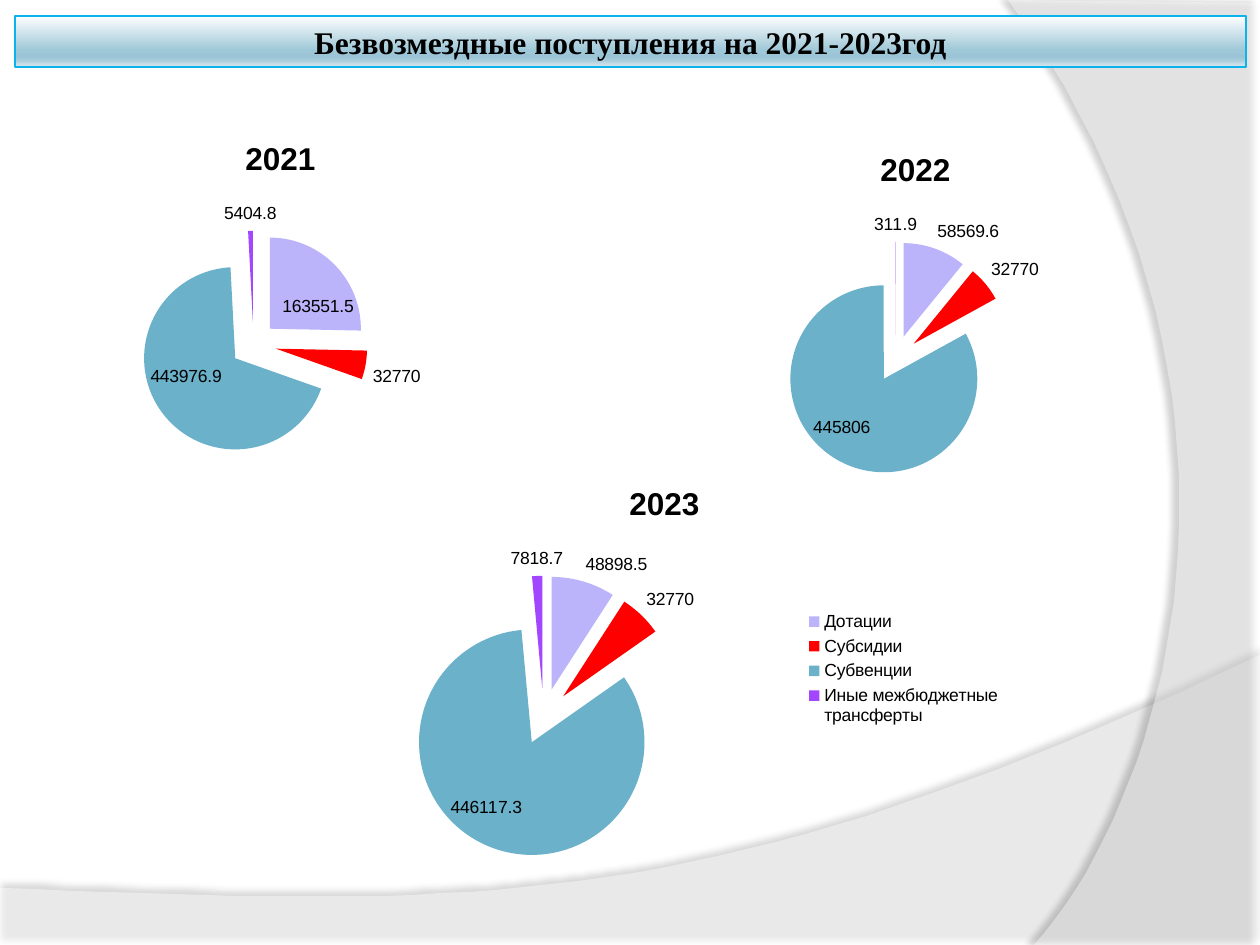
from lxml.etree import SubElement
from pptx import Presentation
from pptx.chart.data import CategoryChartData
from pptx.dml.color import RGBColor
from pptx.enum.chart import XL_CHART_TYPE, XL_LABEL_POSITION, XL_LEGEND_POSITION
from pptx.enum.text import MSO_ANCHOR, PP_ALIGN
from pptx.oxml import parse_xml
from pptx.oxml.ns import nsdecls, qn
from pptx.util import Pt

PX = 914400 / 126
SLICE_COLORS = ["BBB4FB", "FF0000", "6BB1C9", "A246FF"]
NUMBERS = ["1", "2", "3", "4"]
TRANSFERS = ["Дотации", "Субсидии", "Субвенции", "Иные межбюджетные трансферты"]
CHARTS = [
    ("2021", (0, 118, 561, 358), NUMBERS, [163551.5, 32770, 443976.9, 5404.8], False),
    ("2022", (630, 129, 571, 364), NUMBERS, [58569.6, 32770, 445806, 311.9], False),
    ("2023", (315, 462, 699, 413), TRANSFERS, [48898.5, 32770, 446117.3, 7818.7], True),
]
TITLE_STOPS = [(0, "FEFEFF"), (68, "9EC7D7"), (81, "9BC5D6"), (86, "A5CAD9"), (100, "DAE8EE")]


def px(value):
    return round(value * PX)


def color(hex_value):
    return RGBColor.from_string(hex_value)


def curve(start, first, second, end, steps=40):
    points = []
    for step in range(1, steps + 1):
        t = step / steps
        weights = [(1 - t) ** 3, 3 * t * (1 - t) ** 2, 3 * t * t * (1 - t), t ** 3]
        points.append(tuple(
            sum(weight * value for weight, value in zip(weights, axis))
            for axis in zip(start, first, second, end)))
    return points


def add_wave(slide, points, opacity, shadow_opacity, blur, distance, direction):
    builder = slide.shapes.build_freeform(*points[0], scale=PX)
    builder.add_line_segments(points[1:], close=True)
    shape = builder.convert_to_shape()
    shape.line.fill.background()
    shape.fill.solid()
    shape.fill.fore_color.rgb = color("FFFFFF")
    fill_color = next(shape.element.spPr.iter(qn("a:srgbClr")))
    SubElement(fill_color, qn("a:alpha"), val=str(opacity * 1000))
    shape.element.spPr.append(parse_xml(
        f'<a:effectLst {nsdecls("a")}><a:outerShdw blurRad="{Pt(blur)}" dist="{Pt(distance)}" '
        f'dir="{direction * 60000}" algn="ctr" rotWithShape="0"><a:srgbClr val="000000">'
        f'<a:alpha val="{shadow_opacity * 1000}"/></a:srgbClr></a:outerShdw></a:effectLst>'))


def add_background(slide, width, height):
    bottom_start, bottom_end = (width, 655), (0, 888)
    bottom = [bottom_end, (0, height), (width, height), bottom_start]
    bottom += curve(bottom_start, (704, 919), (493, 906), bottom_end)
    add_wave(slide, bottom, 45, 35, 4, 3.5, 270)
    side_start = (1034, height)
    side = [(width, 3), (width, height), side_start]
    side += curve(side_start, (1178, 780), (1283, 378), (1008, 0))
    add_wave(slide, side, 40, 45, 4, 4, 180)


def add_title(slide, box, text):
    title = slide.shapes.title
    title.element.getparent().append(title.element)
    title.left, title.top, title.width, title.height = map(px, box)
    title.line.color.rgb = color("0AB3EC")
    title.line.width = Pt(0.75)
    stops = "".join(f'<a:gs pos="{position * 1000}"><a:srgbClr val="{value}"/></a:gs>'
                    for position, value in TITLE_STOPS)
    title.element.spPr.find(qn("a:ln")).addprevious(parse_xml(
        f'<a:gradFill {nsdecls("a")} rotWithShape="1"><a:gsLst>{stops}</a:gsLst>'
        '<a:lin ang="5400000" scaled="0"/></a:gradFill>'))
    frame = title.text_frame
    frame.text = text
    frame.word_wrap = True
    frame.vertical_anchor = MSO_ANCHOR.MIDDLE
    paragraph = frame.paragraphs[0]
    paragraph.alignment = PP_ALIGN.CENTER
    set_font(paragraph.font, "Times New Roman", 18, True)


def set_font(font, name, size, bold=False):
    font.name = name
    font.size = Pt(size)
    font.bold = bold
    font.color.rgb = color("000000")


def add_pie(slide, year, box, categories, values, has_legend):
    data = CategoryChartData()
    data.categories = categories
    data.add_series(year, values)
    chart = slide.shapes.add_chart(XL_CHART_TYPE.PIE, *map(px, box), data).chart
    set_font(chart.font, "Arial", 10)
    chart.has_title = True
    chart.chart_title.include_in_layout = False
    heading = chart.chart_title.text_frame
    heading.text = year
    set_font(heading.paragraphs[0].font, "Arial", 18, True)
    chart.has_legend = has_legend
    if has_legend:
        chart.legend.position = XL_LEGEND_POSITION.RIGHT
        chart.legend.include_in_layout = False
        set_font(chart.legend.font, "Arial", 10)
    plot = chart.plots[0]
    plot.vary_by_categories = True
    series = plot.series[0]
    for index, slice_color in enumerate(SLICE_COLORS):
        fill = series.points[index].format.fill
        fill.solid()
        fill.fore_color.rgb = color(slice_color)
    series_element = next(chart.element.iter(qn("c:ser")))
    series_element.find(qn("c:dPt")).addprevious(
        parse_xml(f'<c:explosion {nsdecls("c")} val="25"/>'))
    labels = series.data_labels
    labels.show_value = True
    labels.number_format = "General"
    labels.number_format_is_linked = False
    labels.position = XL_LABEL_POSITION.BEST_FIT
    set_font(labels.font, "Arial", 10)


def main():
    width, height = 1260, 945
    presentation = Presentation()
    presentation.slide_width = px(width)
    presentation.slide_height = px(height)
    slide = presentation.slides.add_slide(presentation.slide_layouts[5])
    add_background(slide, width, height)
    add_title(slide, (15, 16, 1231, 51), "Безвозмездные поступления на 2021-2023год")
    for chart in CHARTS:
        add_pie(slide, *chart)
    presentation.save("out.pptx")


if __name__ == "__main__":
    main()
